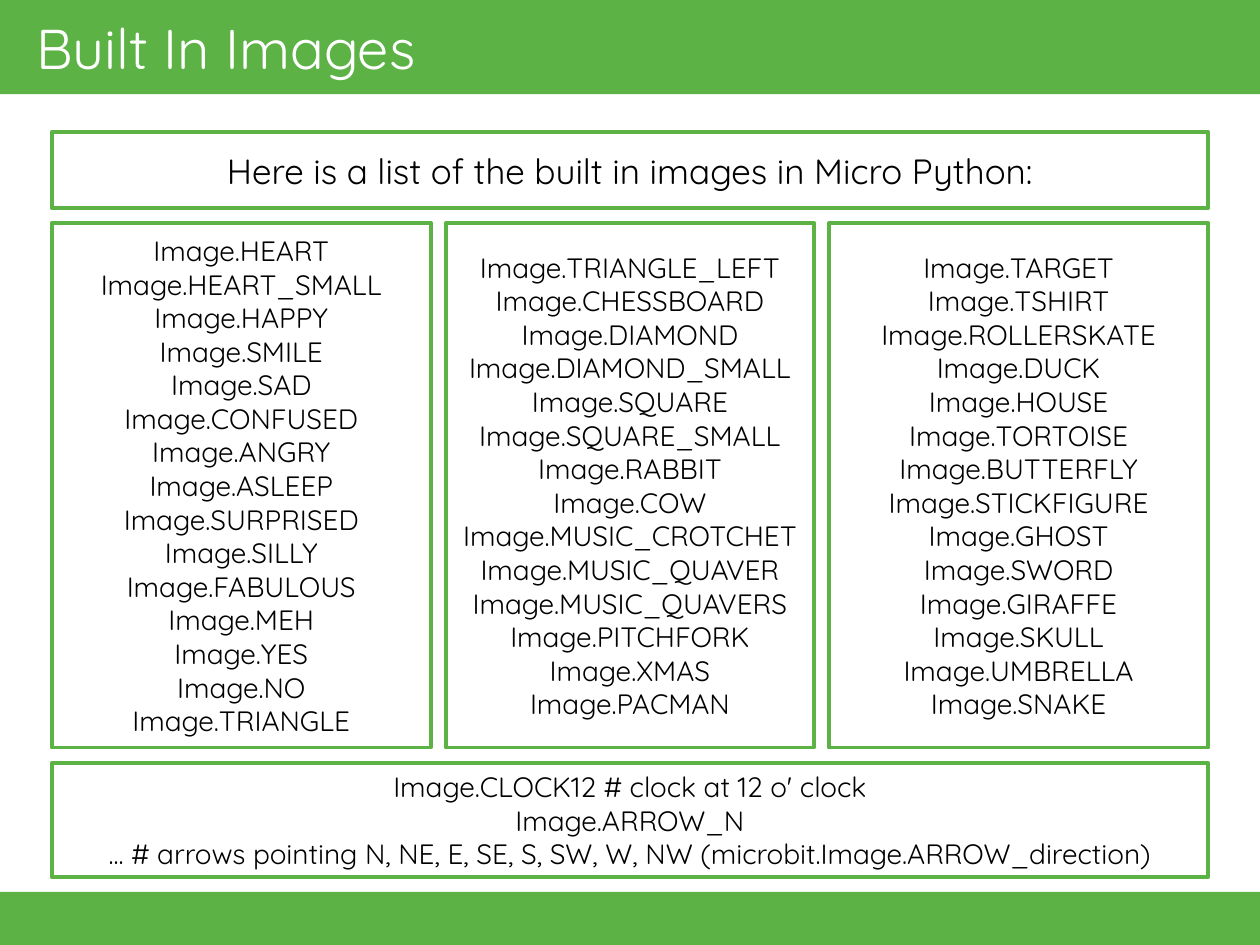
import pptx
import pptx.dml.color
import pptx.enum.shapes
import pptx.enum.text
import pptx.util

Cm = pptx.util.Cm
COLORS = {"green": "5CB244", "white": "FFFFFF", "black": "000000"}
FONT = "Quicksand"

SLIDE_WIDTH, SLIDE_HEIGHT = 25.4, 19.05
HEADER_HEIGHT = 1.9
FOOTER_TOP = 17.98
MARGIN = 1.04
CONTENT_WIDTH = SLIDE_WIDTH - 2 * MARGIN
GAP = 0.3
COLUMNS_TOP, COLUMNS_HEIGHT = 4.5, 10.57

INTRO = "Here is a list of the built in images in Micro Python:"
IMAGE_COLUMNS = [
    (7.65, "HEART HEART_SMALL HAPPY SMILE SAD CONFUSED ANGRY ASLEEP SURPRISED "
           "SILLY FABULOUS MEH YES NO TRIANGLE"),
    (7.42, "TRIANGLE_LEFT CHESSBOARD DIAMOND DIAMOND_SMALL SQUARE SQUARE_SMALL "
           "RABBIT COW MUSIC_CROTCHET MUSIC_QUAVER MUSIC_QUAVERS PITCHFORK "
           "XMAS PACMAN"),
    (7.65, "TARGET TSHIRT ROLLERSKATE DUCK HOUSE TORTOISE BUTTERFLY "
           "STICKFIGURE GHOST SWORD GIRAFFE SKULL UMBRELLA SNAKE"),
]
CLOCKS_AND_ARROWS = [
    "Image.CLOCK12 # clock at 12 o' clock",
    "Image.ARROW_N",
    "... # arrows pointing N, NE, E, SE, S, SW, W, NW "
    "(microbit.Image.ARROW_direction)",
]


def rgb(name):
    return pptx.dml.color.RGBColor.from_string(COLORS[name])


class SlideBuilder:
    def __init__(self, slide):
        self.slide = slide

    def rectangle(self, left, top, width, height):
        shape = self.slide.shapes.add_shape(
            pptx.enum.shapes.MSO_SHAPE.RECTANGLE,
            Cm(left), Cm(top), Cm(width), Cm(height))
        shape.shadow.inherit = False
        return shape

    def band(self, top, height):
        """Add a full-width green band behind the title."""
        shape = self.rectangle(0, top, SLIDE_WIDTH, height)
        shape.fill.solid()
        shape.fill.fore_color.rgb = rgb("green")
        shape.line.fill.background()
        self.slide.shapes.title.element.addprevious(shape.element)

    def set_text(self, shape, lines, size, color, alignment):
        frame = shape.text_frame
        frame.text = "\n".join(lines)
        frame.word_wrap = True
        frame.auto_size = pptx.enum.text.MSO_AUTO_SIZE.NONE
        frame.vertical_anchor = pptx.enum.text.MSO_ANCHOR.MIDDLE
        for paragraph in frame.paragraphs:
            paragraph.alignment = alignment
            for run in paragraph.runs:
                run.font.name = FONT
                run.font.size = pptx.util.Pt(size)
                run.font.color.rgb = rgb(color)

    def title(self, text):
        title = self.slide.shapes.title
        title.left, title.top = Cm(0.48), Cm(0)
        title.width, title.height = Cm(22.86), Cm(HEADER_HEIGHT)
        self.set_text(title, [text], 32, "white",
                      pptx.enum.text.PP_ALIGN.LEFT)

    def box(self, left, top, width, height, lines, size=16):
        """Add a green outlined box with centred lines of text."""
        shape = self.rectangle(left, top, width, height)
        shape.fill.background()
        shape.line.color.rgb = rgb("green")
        shape.line.width = pptx.util.Pt(2.25)
        self.set_text(shape, lines, size, "black",
                      pptx.enum.text.PP_ALIGN.CENTER)


def main():
    presentation = pptx.Presentation()
    presentation.slide_width = Cm(SLIDE_WIDTH)
    presentation.slide_height = Cm(SLIDE_HEIGHT)
    title_only = presentation.slide_layouts[5]
    builder = SlideBuilder(presentation.slides.add_slide(title_only))

    builder.band(0, HEADER_HEIGHT)
    builder.band(FOOTER_TOP, SLIDE_HEIGHT - FOOTER_TOP)
    builder.title("Built In Images")

    builder.box(MARGIN, 2.67, CONTENT_WIDTH, 1.52, [INTRO], size=20)
    left = MARGIN
    for width, names in IMAGE_COLUMNS:
        lines = [f"Image.{name}" for name in names.split()]
        builder.box(left, COLUMNS_TOP, width, COLUMNS_HEIGHT, lines)
        left += width + GAP
    builder.box(MARGIN, 15.39, CONTENT_WIDTH, 2.29, CLOCKS_AND_ARROWS)

    presentation.save("out.pptx")


if __name__ == "__main__":
    main()
